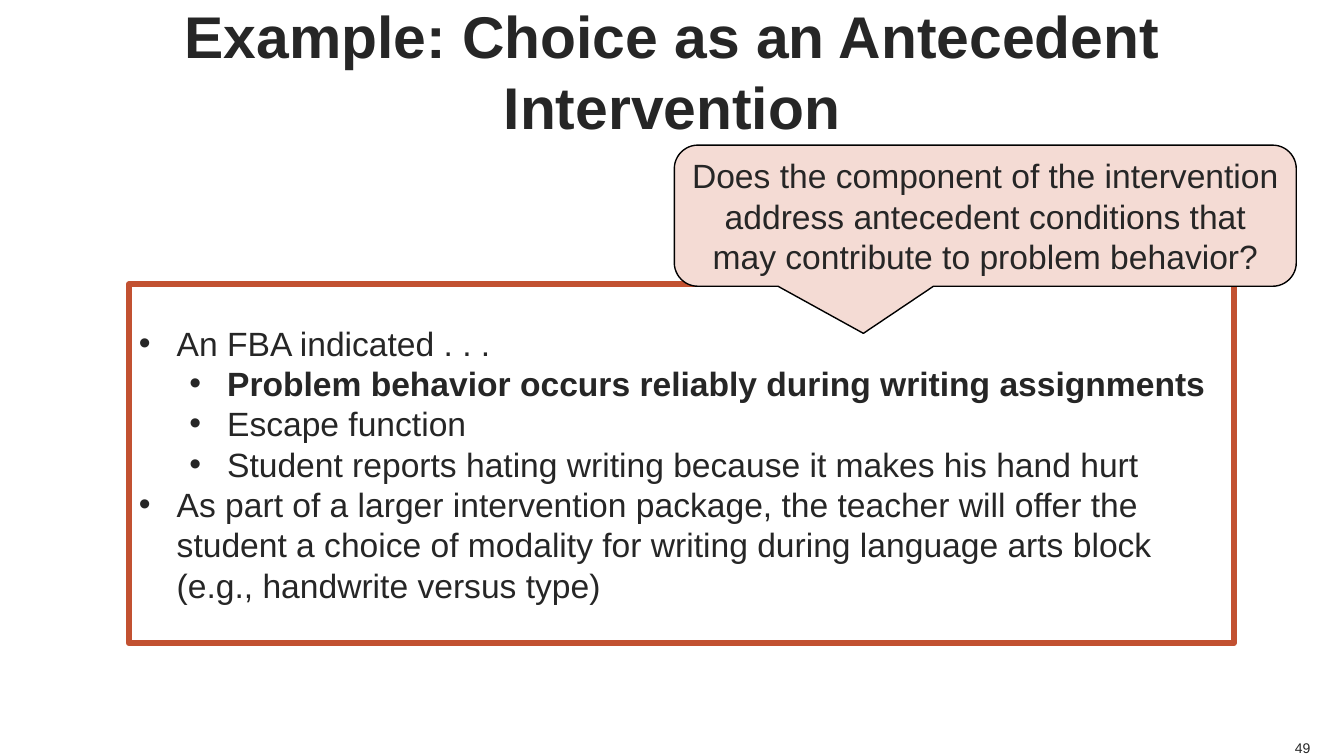
from lxml.etree import SubElement
from pptx import Presentation
from pptx.dml.color import RGBColor
from pptx.enum.shapes import MSO_SHAPE as Shape
from pptx.enum.text import MSO_ANCHOR as Anchor, PP_ALIGN as Align
from pptx.oxml.ns import qn
from pptx.util import Pt

INK = RGBColor(0x26, 0x26, 0x26)
RUST = RGBColor(0xC2, 0x51, 0x31)
BLUSH = RGBColor(0xF4, 0xDB, 0xD4)
BLACK = RGBColor(0, 0, 0)

TITLE = "Example: Choice as an Antecedent Intervention"
ASK = ("Does the component of the intervention address antecedent conditions "
       "that may contribute to problem behavior?")
POINTS = [
    (0, False, "An FBA indicated . . .\u00a0"),
    (1, True, "Problem behavior occurs reliably during writing assignments"),
    (1, False, "Escape function"),
    (1, False, "Student reports hating writing because it makes his hand hurt"),
    (0, False, "As part of a larger intervention package, the teacher will offer "
               "the student a choice of modality for writing during language arts "
               "block (e.g., handwrite versus type)"),
]


def style(para, size, align, bold=False):
    """Align a paragraph and format its runs."""
    para.alignment = align
    for run in para.runs:
        font = run.font
        font.name, font.size, font.bold = "Arial", Pt(size), bold
        font.color.rgb = INK


def bullet(para, level):
    """Give a paragraph a hanging bullet at its level."""
    para.level = level
    props = para._p.get_or_add_pPr()
    props.set("marL", str(Pt(27 + 36 * level)))
    props.set("indent", str(Pt(-27)))
    SubElement(props, qn("a:buFont")).set("typeface", "Arial")
    SubElement(props, qn("a:buChar")).set("char", "•")


def label(slide, box, text, size, align, anchor, bold=False, wrap=True):
    """Add a text box without margins."""
    frame = slide.shapes.add_textbox(*map(Pt, box)).text_frame
    frame.margin_left = frame.margin_right = 0
    frame.margin_top = frame.margin_bottom = 0
    frame.word_wrap, frame.vertical_anchor = wrap, anchor
    frame.text = text
    style(frame.paragraphs[0], size, align, bold)


def panel(slide, kind, box, fill, line, width):
    """Add an outlined shape, filled if a colour is given."""
    shape = slide.shapes.add_shape(kind, *map(Pt, box))
    shape.shadow.inherit = False
    if fill is None:
        shape.fill.background()
    else:
        shape.fill.solid()
        shape.fill.fore_color.rgb = fill
    shape.line.color.rgb = line
    shape.line.width = Pt(width)
    shape.text_frame.word_wrap = True
    shape.text_frame.vertical_anchor = Anchor.MIDDLE
    return shape


def points(slide):
    """Add the framed list of points."""
    box = (92.16, 203.04, 789.12, 256.32)
    frame = panel(slide, Shape.RECTANGLE, box, None, RUST, 4.5).text_frame
    frame.text = "\n".join(text for _, _, text in POINTS)
    for para, (level, bold, _) in zip(frame.paragraphs, POINTS):
        bullet(para, level)
        style(para, 24, Align.LEFT, bold)


def callout(slide):
    """Add the question callout."""
    box = (481.68, 103.68, 444.24, 100.8)
    shape = panel(slide, Shape.ROUNDED_RECTANGULAR_CALLOUT, box, BLUSH, BLACK, 1)
    for i, value in enumerate((-0.196, 0.834, 0.167)):
        shape.adjustments[i] = value
    shape.text_frame.text = ASK
    style(shape.text_frame.paragraphs[0], 24, Align.CENTER)


def main():
    """Build and save the slide."""
    deck = Presentation()
    deck.slide_width, deck.slide_height = Pt(960), Pt(540)
    slide = deck.slides.add_slide(deck.slide_layouts[6])
    label(slide, (36, 0, 888, 100.8), TITLE, 42, Align.CENTER, Anchor.MIDDLE, True)
    points(slide)
    callout(slide)
    label(slide, (923.76, 527.76, 12.24, 12.24), "49", 10, Align.RIGHT,
          Anchor.BOTTOM, wrap=False)
    deck.save("out.pptx")


if __name__ == "__main__":
    main()
